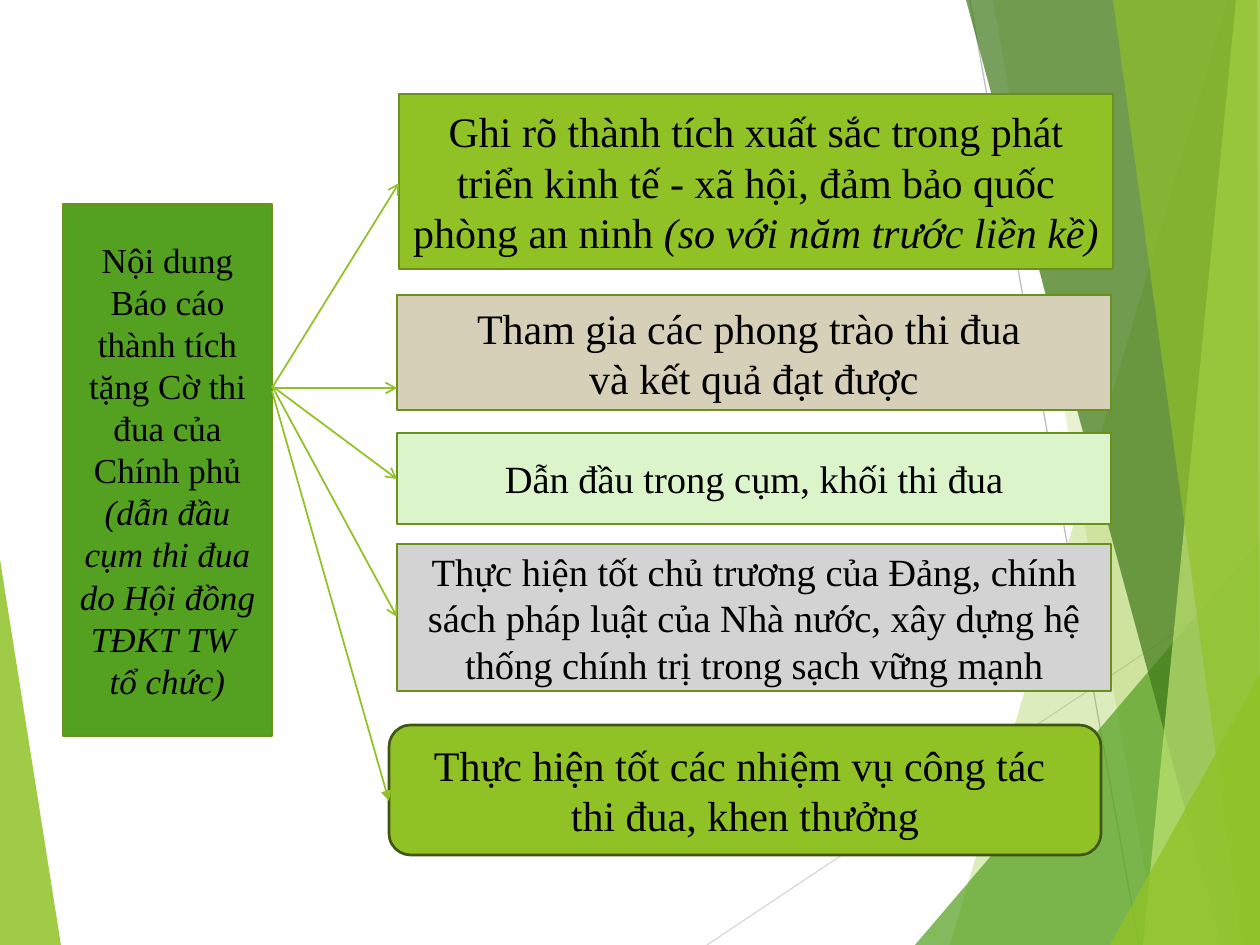
import pptx
import pptx.dml.color
import pptx.enum.shapes
import pptx.enum.text
import pptx.oxml.ns
import pptx.util
from lxml import etree

RGB = pptx.dml.color.RGBColor
LIME = RGB(0x90, 0xC2, 0x26)
GREEN = RGB(0x54, 0xA0, 0x21)
DARK_GREEN = RGB(0x3F, 0x78, 0x19)
PALE_LIME = RGB(0xC0, 0xE4, 0x74)
OLIVE = RGB(0x6B, 0x90, 0x1C)
DARK_OLIVE = RGB(0x3F, 0x55, 0x11)
SAND = RGB(0xD6, 0xD0, 0xB8)
MINT = RGB(0xDB, 0xF4, 0xCA)
GRAY = RGB(0xD3, 0xD3, 0xD3)
LIGHT_RULE = RGB(0xD9, 0xD9, 0xD9)
RULE = RGB(0xBF, 0xBF, 0xBF)
BLACK = RGB(0, 0, 0)

FONT = "Times New Roman"
WIDTH, HEIGHT = 1260, 945
PX = 914400 / 126

RECT = pptx.enum.shapes.MSO_SHAPE.RECTANGLE
ROUNDED = pptx.enum.shapes.MSO_SHAPE.ROUNDED_RECTANGLE

# start, end, colour
BACKGROUND_RULES = [
    ((707, HEIGHT), (WIDTH, 576), LIGHT_RULE),
    ((970, 0), (1139, HEIGHT), RULE),
]

# corners, colour, opacity in percent
FACETS = [
    ([(0, 559), (61, HEIGHT), (0, HEIGHT)], LIME, 85),
    ([(1228, 0), (950, HEIGHT), (WIDTH, HEIGHT), (WIDTH, 0)], LIME, 30),
    ([(993, 0), (1158, HEIGHT), (WIDTH, HEIGHT), (WIDTH, 0)], LIME, 20),
    ([(915, HEIGHT), (WIDTH, 541), (WIDTH, HEIGHT)], GREEN, 72),
    ([(966, 0), (1222, HEIGHT), (WIDTH, HEIGHT), (WIDTH, 0)], DARK_GREEN, 70),
    ([(1236, 0), (1143, HEIGHT), (WIDTH, HEIGHT), (WIDTH, 0)], PALE_LIME, 70),
    ([(1113, 0), (1242, HEIGHT), (WIDTH, HEIGHT), (1257, 0)], LIME, 65),
    ([(1110, HEIGHT), (WIDTH, 674), (WIDTH, HEIGHT)], LIME, 80),
]

# Each paragraph is a list of (text, italic) runs.
REPORT = dict(
    box=(63, 204, 209, 532), fill=GREEN, size=20,
    paragraphs=[
        [("Nội dung Báo cáo thành tích tặng Cờ thi đua của Chính phủ ", False),
         ("(dẫn đầu cụm thi đua do Hội đồng TĐKT TW ", True)],
        [("tổ chức)", True)],
    ])

REQUIREMENTS = [
    dict(box=(399, 94, 714, 175), fill=LIME, size=24, paragraphs=[
        [("Ghi rõ thành tích xuất sắc trong phát triển kinh tế - xã hội, "
          "đảm bảo quốc phòng an ninh ", False),
         ("(so với năm trước liền kề)", True)]]),
    dict(box=(397, 295, 714, 115), fill=SAND, size=24, paragraphs=[
        [("Tham gia các phong trào thi đua ", False)],
        [("và kết quả đạt được", False)]]),
    dict(box=(397, 433, 714, 91), fill=MINT, size=22, paragraphs=[
        [("Dẫn đầu trong cụm, khối thi đua", False)]]),
    dict(box=(397, 544, 714, 147), fill=GRAY, size=22, paragraphs=[
        [("Thực hiện tốt chủ trương của Đảng, chính sách pháp luật của "
          "Nhà nước, xây dựng hệ thống chính trị trong sạch vững mạnh", False)]]),
    dict(box=(389, 725, 712, 130), fill=LIME, size=24, paragraphs=[
        [("Thực hiện tốt các nhiệm vụ công tác ", False)],
        [("thi đua, khen thưởng", False)]],
        preset=ROUNDED, outline=DARK_OLIVE),
]

# Start height, end height and head of the arrow to each requirement
ARROWS = [
    (388, 183, "arrow"),
    (388, 388, "arrow"),
    (386, 479, "arrow"),
    (386, 617, "arrow"),
    (391, 801, "triangle"),
]


def emu(px):
    return pptx.util.Emu(round(px * PX))


def add_child(parent, tag, **attributes):
    return etree.SubElement(parent, pptx.oxml.ns.qn(tag), **attributes)


def write_text(frame, paragraphs, size, color=BLACK):
    frame.word_wrap = True
    frame.vertical_anchor = pptx.enum.text.MSO_ANCHOR.MIDDLE
    for index, runs in enumerate(paragraphs):
        paragraph = frame.add_paragraph() if index else frame.paragraphs[0]
        paragraph.alignment = pptx.enum.text.PP_ALIGN.CENTER
        for text, italic in runs:
            run = paragraph.add_run()
            run.text = text
            run.font.name = FONT
            run.font.size = pptx.util.Pt(size)
            run.font.italic = italic
            run.font.color.rgb = color


def add_box(slide, box, fill, size, paragraphs, preset=RECT, outline=OLIVE):
    shape = slide.shapes.add_shape(preset, *map(emu, box))
    shape.shadow.inherit = False
    shape.fill.solid()
    shape.fill.fore_color.rgb = fill
    shape.line.color.rgb = outline
    shape.line.width = pptx.util.Pt(1.5)
    write_text(shape.text_frame, paragraphs, size)


def add_facet(slide, corners, color, opacity):
    builder = slide.shapes.build_freeform(*corners[0], scale=PX)
    builder.add_line_segments(corners[1:], close=True)
    facet = builder.convert_to_shape()
    facet.shadow.inherit = False
    facet.line.fill.background()
    facet.fill.solid()
    facet.fill.fore_color.rgb = color
    srgb = facet.fill._xPr.find(".//" + pptx.oxml.ns.qn("a:srgbClr"))
    add_child(srgb, "a:alpha", val=str(opacity * 1000))


def add_line(slide, start, end, color, width, head=None):
    line = slide.shapes.add_connector(
        pptx.enum.shapes.MSO_CONNECTOR.STRAIGHT, *map(emu, start + end))
    line.line.color.rgb = color
    line.line.width = pptx.util.Pt(width)
    if head:
        add_child(line.line._get_or_add_ln(), "a:tailEnd", type=head)
    add_child(line._element.spPr, "a:effectLst")


def main():
    deck = pptx.Presentation()
    deck.slide_width, deck.slide_height = emu(WIDTH), emu(HEIGHT)
    slide = deck.slides.add_slide(deck.slide_layouts[6])

    for start, end, color in BACKGROUND_RULES:
        add_line(slide, start, end, color, 0.75)
    for corners, color, opacity in FACETS:
        add_facet(slide, corners, color, opacity)

    add_box(slide, **REPORT)
    left, _, width, _ = REPORT["box"]
    for requirement, (start_y, end_y, head) in zip(REQUIREMENTS, ARROWS):
        add_box(slide, **requirement)
        add_line(slide, (left + width, start_y),
                 (requirement["box"][0], end_y), LIME, 1, head)

    deck.save("out.pptx")


if __name__ == "__main__":
    main()
